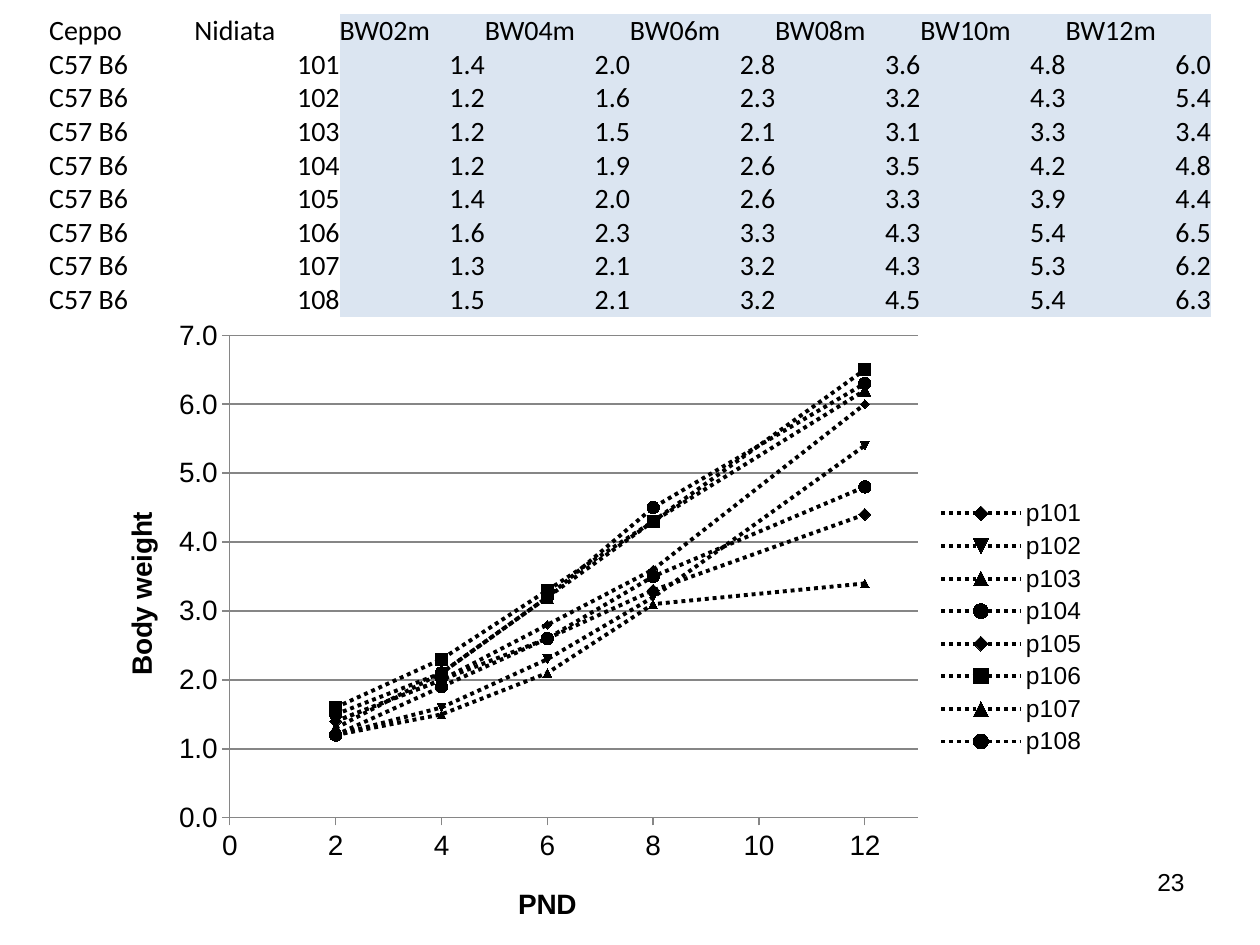
from pptx import Presentation
from pptx.chart.data import XyChartData
from pptx.dml.color import RGBColor
from pptx.enum.chart import XL_CHART_TYPE, XL_LEGEND_POSITION, XL_MARKER_STYLE, XL_TICK_MARK
from pptx.enum.dml import MSO_LINE
from pptx.enum.text import MSO_ANCHOR, PP_ALIGN
from pptx.oxml import parse_xml
from pptx.oxml.ns import nsdecls
from pptx.util import Inches, Pt

SCATTER = XL_CHART_TYPE.XY_SCATTER_LINES
LEGEND_RIGHT = XL_LEGEND_POSITION.RIGHT
OUTSIDE, NO_TICK = XL_TICK_MARK.OUTSIDE, XL_TICK_MARK.NONE
DOTTED = MSO_LINE.ROUND_DOT
LEFT, RIGHT = PP_ALIGN.LEFT, PP_ALIGN.RIGHT
BOTTOM = MSO_ANCHOR.BOTTOM
AUTO, CIRCLE = XL_MARKER_STYLE.AUTOMATIC, XL_MARKER_STYLE.CIRCLE
DIAMOND, SQUARE = XL_MARKER_STYLE.DIAMOND, XL_MARKER_STYLE.SQUARE
TRIANGLE = XL_MARKER_STYLE.TRIANGLE

BLACK, GRAY, BLUE = "000000", "868686", "DBE5F1"
PLAIN_STYLE = "{2D5ABB26-0587-4C30-8999-92F81FD0307C}"

STRAIN = "C57 B6"
DAYS = [2, 4, 6, 8, 10, 12]
UNPLOTTED = 10
WEIGHTS = {
    101: [1.4, 2.0, 2.8, 3.6, 4.8, 6.0],
    102: [1.2, 1.6, 2.3, 3.2, 4.3, 5.4],
    103: [1.2, 1.5, 2.1, 3.1, 3.3, 3.4],
    104: [1.2, 1.9, 2.6, 3.5, 4.2, 4.8],
    105: [1.4, 2.0, 2.6, 3.3, 3.9, 4.4],
    106: [1.6, 2.3, 3.3, 4.3, 5.4, 6.5],
    107: [1.3, 2.1, 3.2, 4.3, 5.3, 6.2],
    108: [1.5, 2.1, 3.2, 4.5, 5.4, 6.3],
}
MARKERS = [(AUTO, 5)] * 3 + [
    (CIRCLE, 7), (DIAMOND, 7), (SQUARE, 7), (TRIANGLE, 7), (CIRCLE, 7)]


def rgb(code):
    return RGBColor.from_string(code)


def assign(target, values):
    for name, value in values.items():
        setattr(target, name, value)


def set_font(font, size, name="Arial", bold=False):
    assign(font, {"size": Pt(size), "name": name, "bold": bold})
    font.color.rgb = rgb(BLACK)


def set_line(line, color, width):
    line.color.rgb = rgb(color)
    line.width = Pt(width)


def place(parent, **parts):
    """Fix the layout of a chart part, in fractions of the chart."""
    for old in parent.xpath("c:layout"):
        parent.remove(old)
    modes = "".join(f'<c:{k}Mode val="edge"/>' for k in "xy")
    sizes = "".join(f'<c:{k} val="{v}"/>' for k, v in parts.items())
    inner = '<c:layoutTarget val="inner"/>' if "w" in parts else ""
    new = parse_xml(f'<c:layout {nsdecls("c")}><c:manualLayout>'
                    f"{inner}{modes}{sizes}</c:manualLayout></c:layout>")
    parent.insert(len(parent.xpath("c:tx")), new)


def fill_cell(cell, text, align, color):
    assign(cell, {"margin_left": 0, "margin_right": 0, "margin_top": 0,
                  "margin_bottom": 0, "vertical_anchor": BOTTOM})
    if color:
        cell.fill.solid()
        cell.fill.fore_color.rgb = rgb(color)
    else:
        cell.fill.background()
    para = cell.text_frame.paragraphs[0]
    para.alignment = align
    run = para.add_run()
    run.text = text
    set_font(run.font, 16, "Calibri")


def add_weights(slide):
    rows = [["Ceppo", "Nidiata"] + [f"BW{day:02}m" for day in DAYS]]
    rows += [[STRAIN, str(litter)] + [f"{value:.1f}" for value in values]
             for litter, values in WEIGHTS.items()]
    frame = slide.shapes.add_table(
        len(rows), len(rows[0]), Inches(0.39), Inches(0.11),
        Inches(9.22), Inches(0.21 * len(rows)))
    table = frame.table
    assign(table, {"first_row": False, "horz_banding": False})
    for style in frame.element.iter("{*}tableStyleId"):
        style.text = PLAIN_STYLE
    for r, row in enumerate(rows):
        for c, text in enumerate(row):
            align = RIGHT if r and c else LEFT
            fill_cell(table.cell(r, c), text, align, BLUE if c > 1 else None)


def style_axis(axis, title, top, step, form, spot):
    assign(axis, {"minimum_scale": 0, "maximum_scale": top, "major_unit": step,
                  "major_tick_mark": OUTSIDE, "minor_tick_mark": NO_TICK})
    assign(axis.tick_labels, {"number_format": form, "number_format_is_linked": False})
    set_font(axis.tick_labels.font, 16)
    set_line(axis.format.line, GRAY, 0.75)
    run = axis.axis_title.text_frame.paragraphs[0].add_run()
    run.text = title
    set_font(run.font, 16, bold=True)
    place(axis.axis_title.element, x=spot[0], y=spot[1])


def style_series(series, style, size):
    series.smooth = False
    set_line(series.format.line, BLACK, 2.25)
    series.format.line.dash_style = DOTTED
    marker = series.marker
    assign(marker, {"style": style, "size": size})
    marker.format.fill.solid()
    marker.format.fill.fore_color.rgb = rgb(BLACK)
    set_line(marker.format.line, BLACK, 0.75)


def add_growth(slide):
    data = XyChartData(number_format="0.0")
    for litter, values in WEIGHTS.items():
        series = data.add_series(f"p{litter}")
        for day, value in zip(DAYS, values):
            if day != UNPLOTTED:
                series.add_data_point(day, value)
    chart = slide.shapes.add_chart(
        SCATTER, Inches(0.7), Inches(2.46), Inches(8.03), Inches(5.04), data).chart
    assign(chart, {"has_title": False, "has_legend": True})
    set_font(chart.font, 14)
    assign(chart.legend, {"position": LEGEND_RIGHT, "include_in_layout": False})
    set_font(chart.legend.font, 14)
    chart.plots[0].vary_by_categories = False
    days, weight = chart.category_axis, chart.value_axis
    style_axis(days, "PND", 13, 2, "0;[Red]0", (0.42, 0.9))
    style_axis(weight, "Body weight", 7, 1, "0.0", (0.03, 0.31))
    days.has_major_gridlines = False
    set_line(weight.major_gridlines.format.line, GRAY, 0.75)
    place(chart.element.xpath(".//c:plotArea")[0], x=0.14, y=0.04, w=0.68, h=0.76)
    for series, (style, size) in zip(chart.plots[0].series, MARKERS):
        style_series(series, style, size)


def add_number(slide, text):
    box = slide.shapes.add_textbox(Inches(8.54), Inches(6.83), Inches(0.96), Inches(0.52))
    box.text_frame.word_wrap = True
    para = box.text_frame.paragraphs[0]
    para.alignment = RIGHT
    run = para.add_run()
    run.text = text
    set_font(run.font, 14)


def main():
    deck = Presentation()
    assign(deck, {"slide_width": Inches(10), "slide_height": Inches(7.5)})
    slide = deck.slides.add_slide(deck.slide_layouts[6])
    add_number(slide, "23")
    add_growth(slide)
    add_weights(slide)
    deck.save("out.pptx")


if __name__ == "__main__":
    main()
